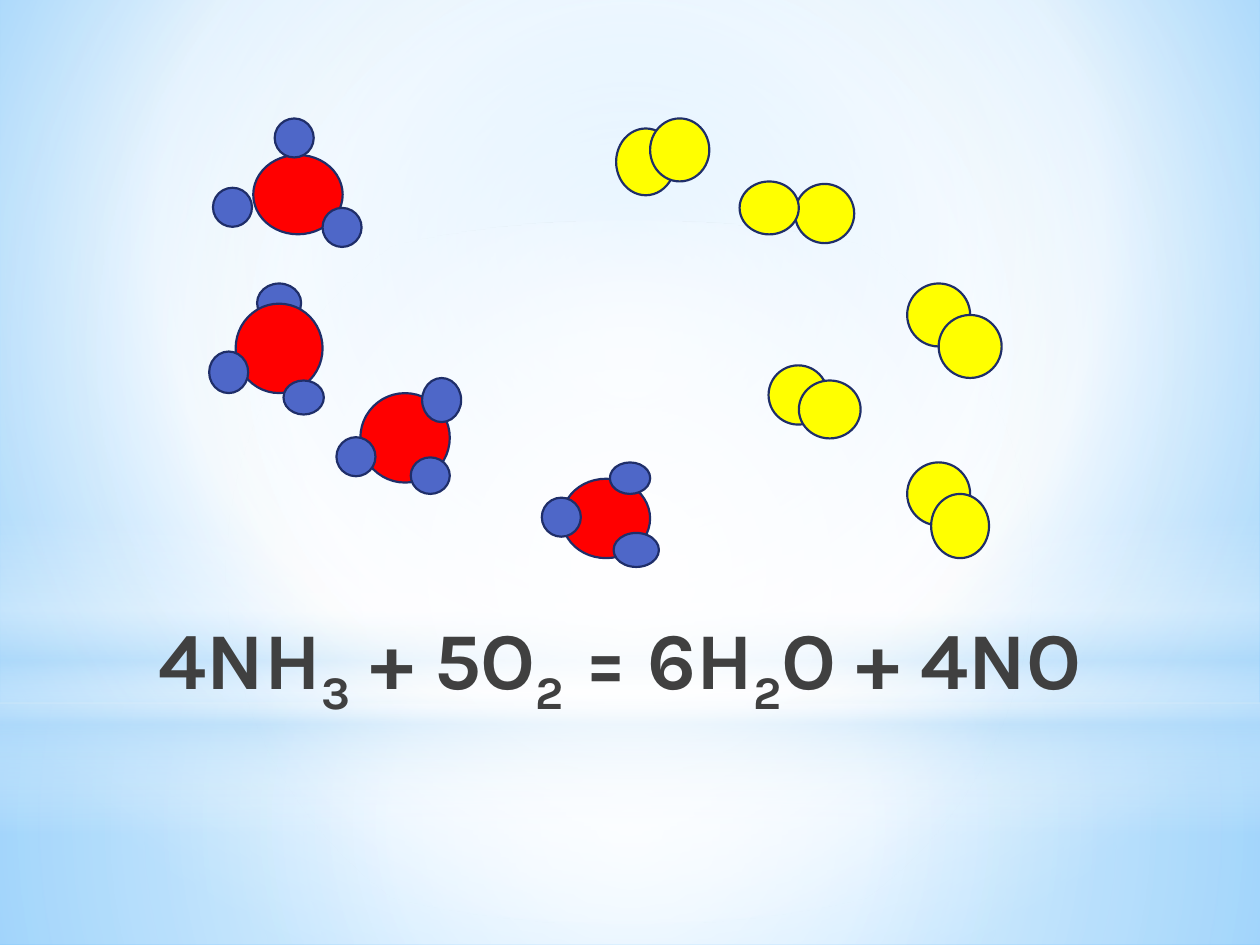
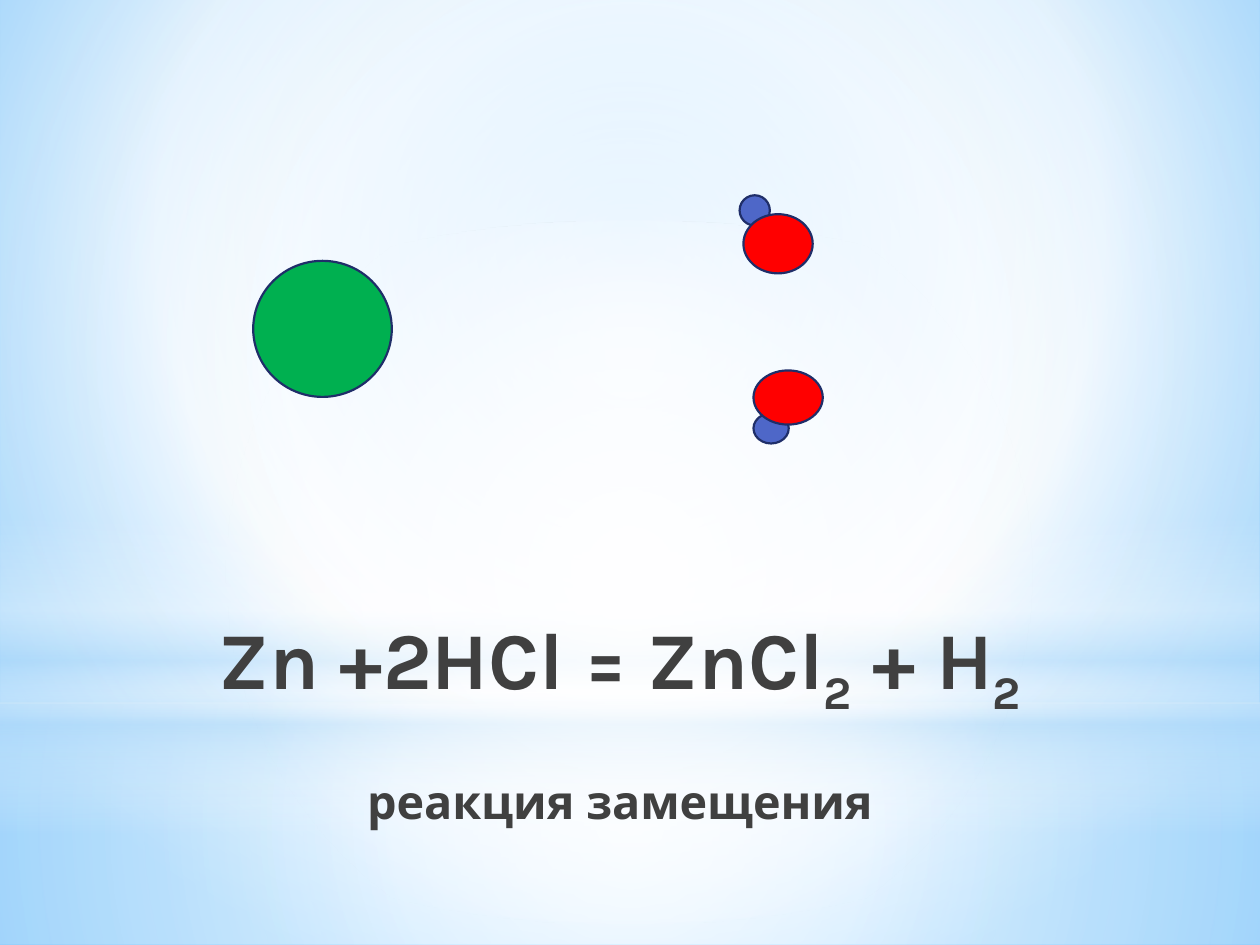
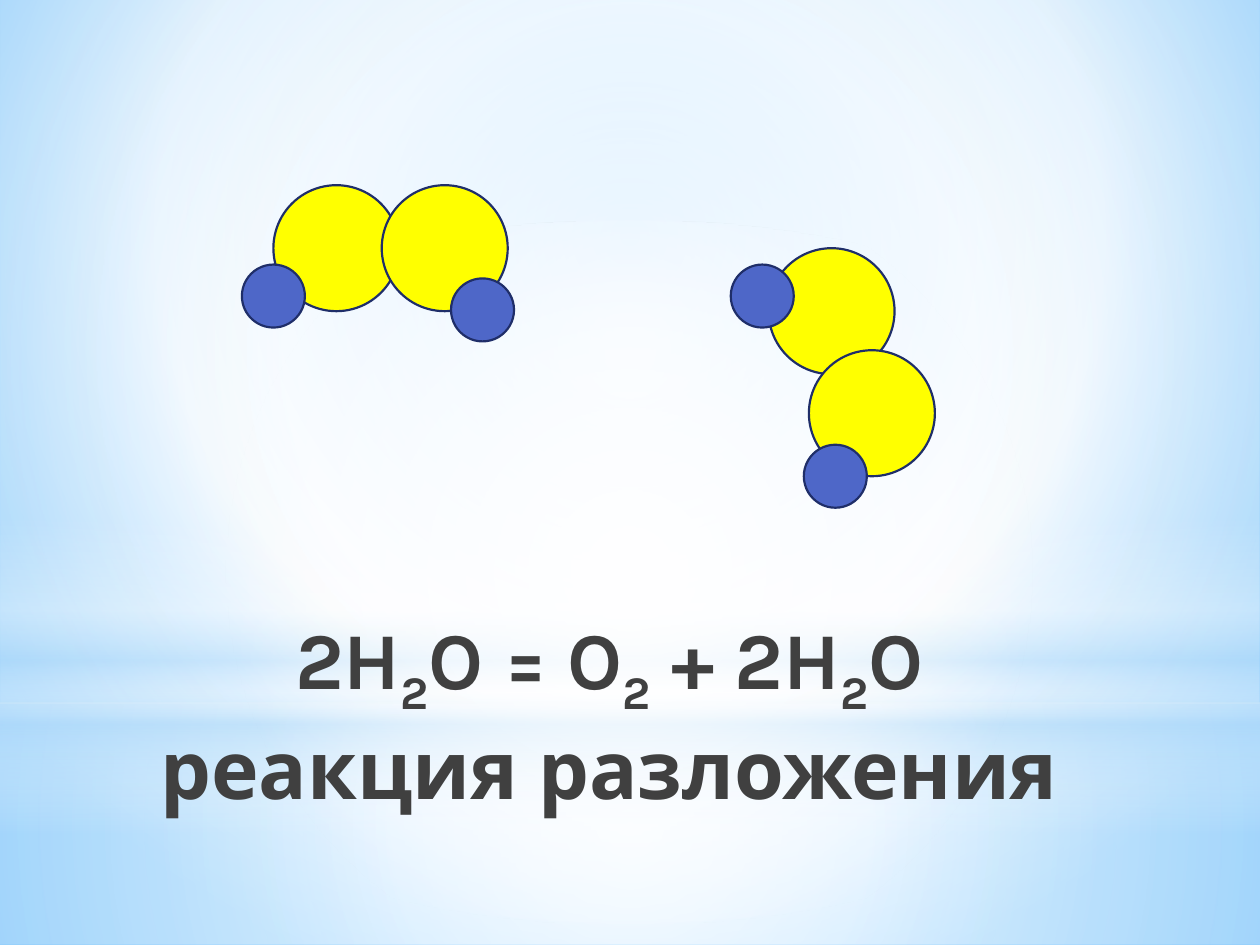
from pptx import Presentation
from pptx.dml.color import RGBColor
from pptx.enum.shapes import MSO_SHAPE
from pptx.enum.text import MSO_ANCHOR, MSO_AUTO_SIZE, PP_ALIGN
from pptx.oxml import parse_xml
from pptx.oxml.ns import nsdecls, qn
from pptx.util import Inches, Pt

FONT = "Karla"
TEXT, OUTLINE = "404040", "1F2E69"
RED, BLUE, YELLOW, GREEN = "FF0000", "4E67C8", "FFFF00", "00B050"
WHITE, SKY = "FFFFFF", "B4DCFA"
CENTRE = (50, 50, 50, 50)


def color(value):
    return RGBColor.from_string(value)


def set_gradient(fill, element, stops, focus=None):
    """Stops are (position, colour, opacity); without a focus it runs downwards."""
    fill.gradient()
    stop_xml = "".join(
        f'<a:gs pos="{position * 1000}"><a:srgbClr val="{value}">'
        f'<a:alpha val="{opacity * 1000}"/></a:srgbClr></a:gs>'
        for position, value, opacity in stops)
    direction = '<a:lin ang="5400000" scaled="0"/>'
    if focus:
        edges = " ".join(f'{side}="{part * 1000}"' for side, part in zip("ltrb", focus))
        direction = f'<a:path path="circle"><a:fillToRect {edges}/></a:path>'
    gradient = next(element.iter(qn("a:gradFill")))
    gradient.getparent().replace(gradient, parse_xml(
        f'<a:gradFill {nsdecls("a")}><a:gsLst>{stop_xml}</a:gsLst>{direction}</a:gradFill>'))


# Slide contents: title box, formula (subscripts between bars), circles back to front
slides = [
    ((0.75, 4.78, 8.34, 1.25), "4NH|3| + 5O|2| = 6H|2|O + 4NO", [
        # Red and blue groups
        (RED, 2.01, 1.23, 0.71, 0.63), (BLUE, 1.69, 1.49, 0.31, 0.31),
        (BLUE, 2.56, 1.65, 0.31, 0.31), (BLUE, 2.18, 0.94, 0.31, 0.31),
        (BLUE, 2.04, 2.25, 0.35, 0.31), (RED, 1.87, 2.41, 0.69, 0.71),
        (BLUE, 2.25, 3.02, 0.32, 0.27), (BLUE, 1.66, 2.79, 0.31, 0.33),
        (RED, 2.86, 3.12, 0.71, 0.71), (BLUE, 3.35, 3, 0.31, 0.35),
        (BLUE, 2.67, 3.47, 0.31, 0.31), (BLUE, 3.26, 3.63, 0.31, 0.29),
        (RED, 4.46, 3.8, 0.7, 0.63), (BLUE, 4.84, 3.67, 0.32, 0.25),
        (BLUE, 4.3, 3.95, 0.31, 0.31), (BLUE, 4.87, 4.23, 0.36, 0.27),
        # Yellow pairs
        (YELLOW, 4.89, 1.02, 0.47, 0.53), (YELLOW, 5.16, 0.94, 0.47, 0.5),
        (YELLOW, 6.31, 1.46, 0.47, 0.47), (YELLOW, 5.87, 1.44, 0.47, 0.42),
        (YELLOW, 7.2, 2.25, 0.5, 0.5), (YELLOW, 7.45, 2.5, 0.5, 0.5),
        (YELLOW, 6.1, 2.9, 0.47, 0.47), (YELLOW, 6.34, 3.02, 0.49, 0.46),
        (YELLOW, 7.2, 3.67, 0.5, 0.5), (YELLOW, 7.39, 3.92, 0.46, 0.51),
    ]),
    ((0.75, 4.78, 8.34, 1.72), "Zn +2HCl = ZnCl|2| + H|2\nреакция замещения", [
        (GREEN, 2.01, 2.07, 1.1, 1.08),
        (BLUE, 5.87, 1.55, 0.24, 0.24), (RED, 5.9, 1.7, 0.55, 0.47),
        (BLUE, 5.98, 3.28, 0.28, 0.24), (RED, 5.98, 2.94, 0.55, 0.43),
    ]),
    ((0.59, 4.78, 8.49, 1.88), "2H|2|O = O|2| + 2H|2|O\nреакция разложения", [
        (YELLOW, 2.17, 1.47, 1, 1), (YELLOW, 3.03, 1.47, 1, 1),
        (BLUE, 1.92, 2.1, 0.5, 0.5), (BLUE, 3.58, 2.21, 0.5, 0.5),
        (YELLOW, 6.1, 1.97, 1, 1), (YELLOW, 6.42, 2.78, 1, 1),
        (BLUE, 5.8, 2.1, 0.5, 0.5), (BLUE, 6.38, 3.53, 0.5, 0.5),
    ]),
]

# Shared backdrop layers: shape, box, gradient stops, focus
layers = [
    (MSO_SHAPE.RECTANGLE, (0, 5.58, 10, 1.92),
     [(0, WHITE, 91), (37, WHITE, 76), (100, SKY, 79)], CENTRE),
    (MSO_SHAPE.RECTANGLE, (0, 0, 10, 5.58),
     [(0, WHITE, 89), (48, WHITE, 62), (100, SKY, 79)], CENTRE),
    (MSO_SHAPE.RECTANGLE, (0, 4.12, 10, 2.5),
     [(0, WHITE, 0), (29, WHITE, 30), (45, SKY, 40),
      (55, WHITE, 26), (65, SKY, 60), (100, WHITE, 0)], None),
    (MSO_SHAPE.OVAL, (0, 1.75, 10, 5.58),
     [(0, WHITE, 100), (56, WHITE, 0)], CENTRE),
]

deck = Presentation()
deck.slide_width, deck.slide_height = Inches(10), Inches(7.5)
master = deck.slide_master
title_only = deck.slide_layouts[5]
set_gradient(master.background.fill, master.element,
             [(0, "9ED5FF", 100), (60, WHITE, 100), (100, "5BB9FF", 100)],
             (20, 10, 20, 60))

for slide_index, (title_box, formula, circles) in enumerate(slides):
    slide = deck.slides.add_slide(title_only)

    # Backdrop: drawn once, then moved behind the master's placeholders
    if slide_index == 0:
        for layer_index, (kind, box, stops, focus) in enumerate(layers):
            layer = slide.shapes.add_shape(kind, *map(Inches, box))
            layer.shadow.inherit = False
            layer.line.fill.background()
            set_gradient(layer.fill, layer.element, stops, focus)
            layer.element.nvSpPr.cNvPr.set("id", str(100 + layer_index))
            master.shapes.element.insert(2 + layer_index, layer.element)

    # Formula title
    title = slide.shapes.title
    title.left, title.top, title.width, title.height = map(Inches, title_box)
    frame = title.text_frame
    frame.word_wrap = True
    frame.auto_size = MSO_AUTO_SIZE.NONE
    frame.vertical_anchor = MSO_ANCHOR.TOP
    para = frame.paragraphs[0]
    para.alignment = PP_ALIGN.CENTER
    for part_index, part in enumerate(formula.split("|")):
        for line_index, line in enumerate(part.split("\n")):
            if line_index:
                para.add_line_break()
            span = para.add_run()
            span.text = line
            span.font.name = FONT
            span.font.size = Pt(46)
            span.font.bold = True
            span.font.color.rgb = color(TEXT)
            if part_index % 2:
                span.font._element.set("baseline", "-25000")

    # Circles
    for circle_color, *box in circles:
        circle = slide.shapes.add_shape(MSO_SHAPE.OVAL, *map(Inches, box))
        circle.shadow.inherit = False
        circle.fill.solid()
        circle.fill.fore_color.rgb = color(circle_color)
        circle.line.color.rgb = color(OUTLINE)
        circle.line.width = Pt(1.25)

deck.save("out.pptx")
